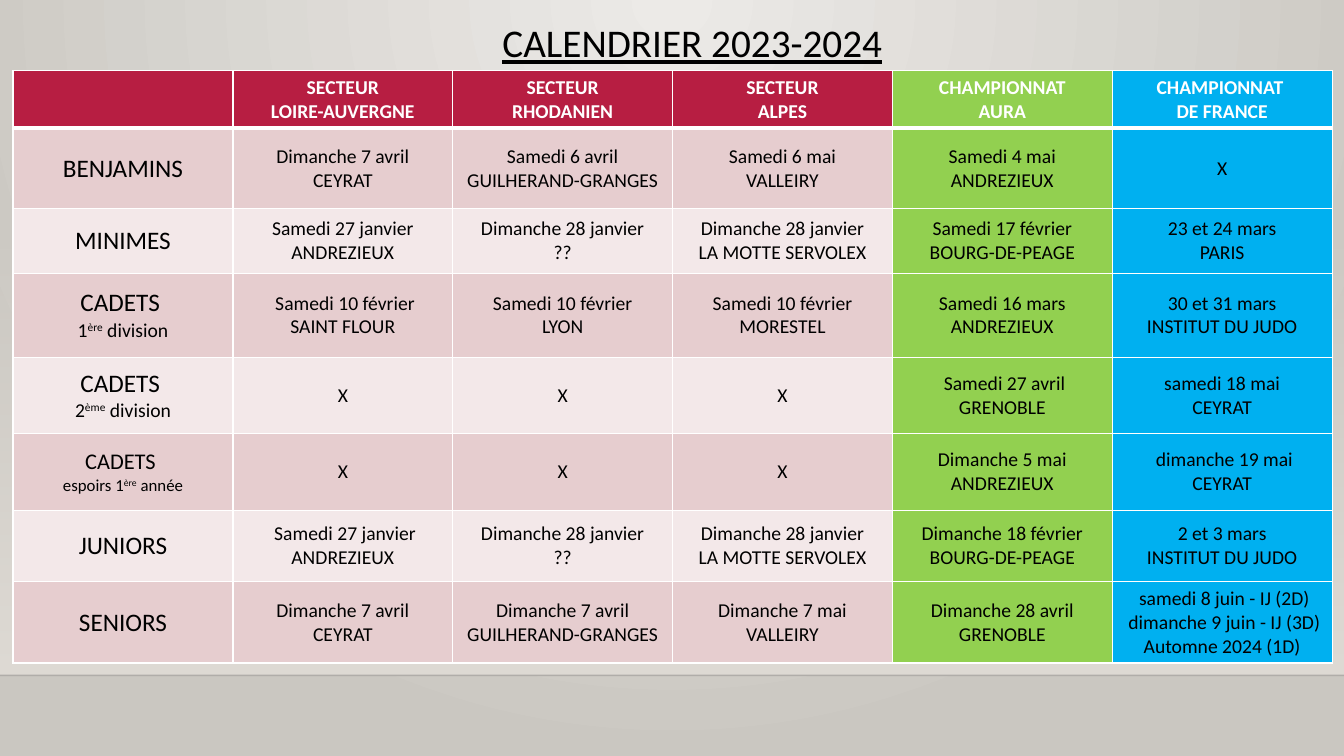
"""Build the 2023-2024 competition calendar slide."""
from lxml.etree import SubElement
from pptx import Presentation
from pptx.dml.color import RGBColor as RGB
from pptx.enum.shapes import MSO_CONNECTOR as LINE, MSO_SHAPE as SHAPE
from pptx.enum.text import MSO_ANCHOR as ANCHOR, PP_ALIGN as ALIGN
from pptx.oxml.ns import qn
from pptx.util import Cm, Pt

HUES = {
    "light": "ECEAE7", "dark": "CAC7C1", "wall": "DFDBD5", "edge": "000001",
    "red": "B71E42", "rose": "E6CDCF", "pale": "F3E8E9", "green": "92D050",
    "blue": "00B0F0", "white": "FFFFFF", "black": "000000",
}
FONT = "Calibri"
WIDE, HIGH, FLOOR = 33.87, 19.05, 17.02

HEAD = ["", "SECTEUR\nLOIRE-AUVERGNE", "SECTEUR\nRHODANIEN", "SECTEUR\nALPES",
        "CHAMPIONNAT\nAURA", "CHAMPIONNAT \nDE FRANCE"]
ROWS = [
    HEAD,
    ["BENJAMINS", " Dimanche 7 avril \nCEYRAT", "Samedi 6 avril\nGUILHERAND-GRANGES",
     "Samedi 6 mai\nVALLEIRY", "Samedi 4 mai\nANDREZIEUX", "X"],
    ["MINIMES", "Samedi 27 janvier\nANDREZIEUX", "Dimanche 28 janvier\n??",
     "Dimanche 28 janvier\nLA MOTTE SERVOLEX", "Samedi 17 février\nBOURG-DE-PEAGE",
     "23 et 24 mars\nPARIS"],
    ["CADETS \n1^ère^ division", " Samedi 10 février\nSAINT FLOUR",
     "Samedi 10 février\nLYON", "Samedi 10 février\nMORESTEL",
     "Samedi 16 mars\nANDREZIEUX", "30 et 31 mars\nINSTITUT DU JUDO"],
    ["CADETS \n2^ème^ division", "X", "X", "X", " Samedi 27 avril\nGRENOBLE",
     "samedi 18 mai\nCEYRAT"],
    ["CADETS \nespoirs 1^ère^ année", "X", "X", "X", "Dimanche 5 mai\nANDREZIEUX",
     " dimanche 19 mai\nCEYRAT"],
    ["JUNIORS", " Samedi 27 janvier\nANDREZIEUX", "Dimanche 28 janvier\n??",
     "Dimanche 28 janvier\nLA MOTTE SERVOLEX", "Dimanche 18 février\nBOURG-DE-PEAGE",
     "2 et 3 mars\nINSTITUT DU JUDO"],
    ["SENIORS", "Dimanche 7 avril\nCEYRAT", "Dimanche 7 avril\nGUILHERAND-GRANGES",
     "Dimanche 7 mai\nVALLEIRY", "Dimanche 28 avril\nGRENOBLE",
     " samedi 8 juin - IJ (2D)\n dimanche 9 juin - IJ (3D)\nAutomne 2024 (1D)"],
]
TALL = [1.45, 2.03, 1.63, 2.11, 1.93, 1.93, 1.8, 2.05]
SIZES = {5: (16, 12)}


def hue(name):
    """Return a palette colour."""
    return RGB.from_string(HUES[name])


def style(run, size, tint):
    """Set the font of a run."""
    run.font.name, run.font.size = FONT, Pt(size)
    run.font.color.rgb = hue(tint)


deck = Presentation()
deck.slide_width, deck.slide_height = Cm(WIDE), Cm(HIGH)
slide = deck.slides.add_slide(deck.slide_layouts[6])
shapes = slide.shapes

back = slide.background.fill
back.gradient()
for stop, name in zip(back.gradient_stops, ("light", "dark")):
    stop.color.rgb = hue(name)
grad = next(slide.background._cSld.iter(qn("a:gradFill")))
grad.remove(grad.find(qn("a:lin")))
glow = SubElement(grad, qn("a:path"), path="circle")
SubElement(glow, qn("a:fillToRect"), l="43000", t="0", r="43000", b="100000")

wall = shapes.add_shape(SHAPE.RECTANGLE, 0, Cm(5.61), Cm(WIDE), Cm(FLOOR - 5.61))
wall.shadow.inherit = False
wall.line.fill.background()
wall.fill.gradient()
wall.fill.gradient_angle = 270
for stop in wall.fill.gradient_stops:
    stop.color.rgb = hue("wall")
SubElement(next(wall._element.iter(qn("a:srgbClr"))), qn("a:alpha"), val="0")

edge = shapes.add_connector(LINE.STRAIGHT, 0, Cm(FLOOR), Cm(WIDE), Cm(FLOOR))
edge.line.color.rgb = hue("edge")
edge.line.width = Pt(1)
SubElement(next(edge._element.iter(qn("a:srgbClr"))), qn("a:alpha"), val="20000")
SubElement(edge._element.spPr, qn("a:effectLst"))

title = shapes.add_textbox(Cm(4.11), Cm(0.48), Cm(26.67), Cm(0.91)).text_frame
title.word_wrap = True
title.text = "CALENDRIER 2023-2024"
line = title.paragraphs[0]
line.alignment, line.line_spacing = ALIGN.CENTER, 0.9
style(line.runs[0], 28, "black")
line.runs[0].font.underline = True

frame = shapes.add_table(len(ROWS), len(HEAD), Cm(0.33), Cm(1.78),
                         Cm(5.54 * len(HEAD)), Cm(sum(TALL)))
table = frame.table
for col in table.columns:
    col.width = Cm(5.54)
for r, texts in enumerate(ROWS):
    table.rows[r].height = Cm(TALL[r])
    band = "red" if r == 0 else "rose" if r % 2 else "pale"
    for c, text in enumerate(texts):
        cell = table.cell(r, c)
        cell.vertical_anchor = ANCHOR.MIDDLE
        props = cell._tc.get_or_add_tcPr()
        for side in "LRTB":
            thick = (r, side) in ((0, "B"), (1, "T"))
            rule = SubElement(props, qn("a:ln" + side), w=str(Pt(3 if thick else 1)))
            paint = SubElement(rule, qn("a:solidFill"))
            SubElement(paint, qn("a:srgbClr"), val=HUES["white"])
        cell.fill.solid()
        cell.fill.fore_color.rgb = hue({4: "green", 5: "blue"}.get(c, band))
        cell.text_frame.text = text
        for n, line in enumerate(cell.text_frame.paragraphs):
            line.alignment = ALIGN.CENTER
            size = SIZES.get(r, (18, 14))[n] if c == 0 else 14
            parts = line.text.split("^")
            line.text = parts[0]
            for part in parts[1:]:
                line.add_run().text = part
            for k, run in enumerate(line.runs):
                style(run, size, "black" if r else "white")
                run.font.bold = r == 0
                if k == 1:
                    run.font._element.set("baseline", "30000")

deck.save("out.pptx")
